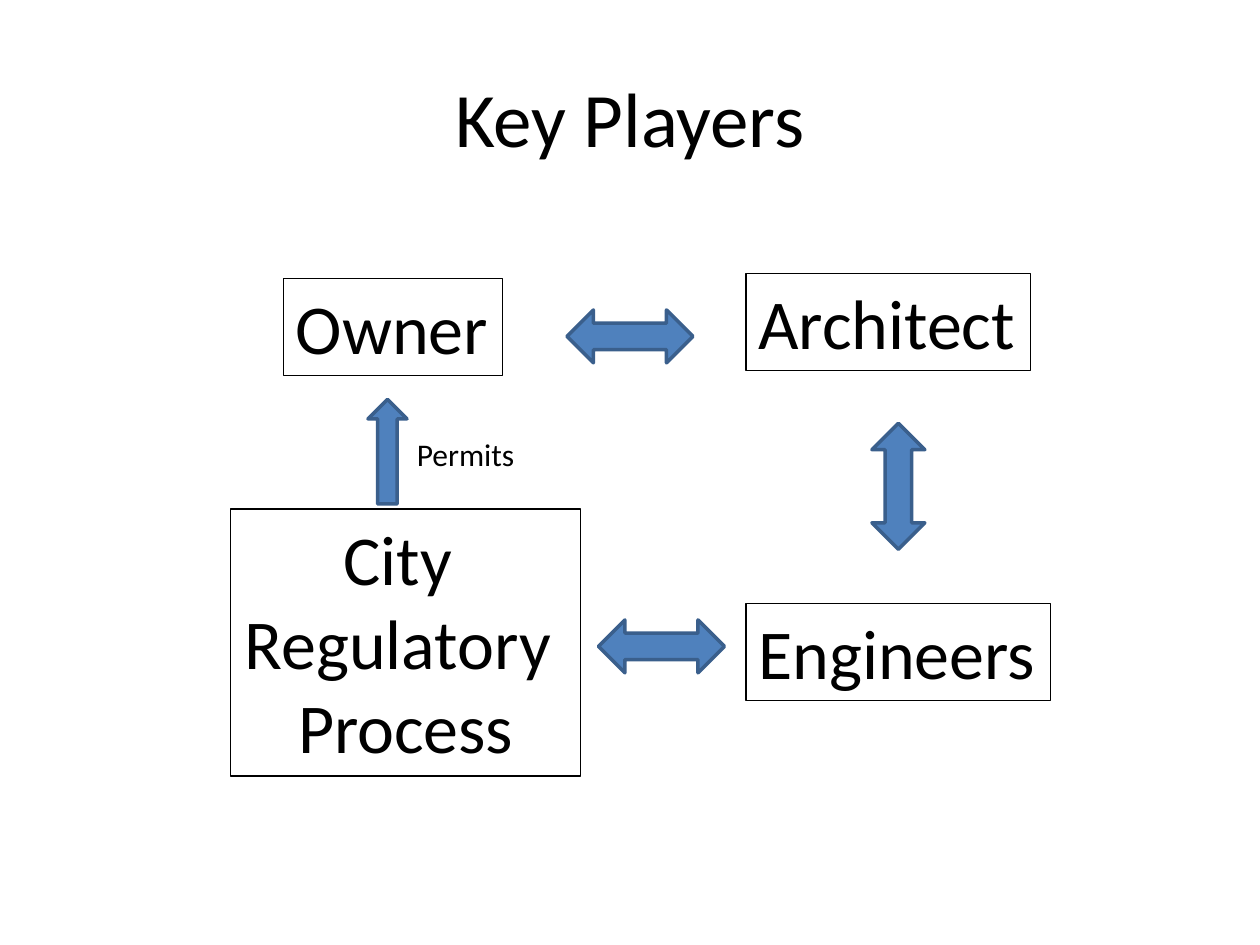
"""Build the Key Players slide, showing how project parties relate."""
from dataclasses import dataclass

import pptx
import pptx.dml.color
import pptx.enum.shapes
import pptx.enum.text
import pptx.util

Inches = pptx.util.Inches
Pt = pptx.util.Pt
Color = pptx.dml.color.RGBColor.from_string
Shape = pptx.enum.shapes.MSO_SHAPE
Align = pptx.enum.text.PP_ALIGN
Anchor = pptx.enum.text.MSO_ANCHOR
AutoSize = pptx.enum.text.MSO_AUTO_SIZE


@dataclass(frozen=True)
class Theme:
    """Colours, font, type sizes and line widths."""

    font: str = "Calibri"
    ink: str = "000000"
    arrow_fill: str = "4F81BD"
    arrow_line: str = "3A5F8C"
    title_size: int = 44
    player_size: int = 40
    label_size: int = 18
    frame_width: float = 0.75
    arrow_width: float = 2


def apply_format(target, values):
    """Set each named attribute on the target."""
    for name, value in values.items():
        setattr(target, name, value)


class SlideBuilder:
    """Draw styled elements on the current slide."""

    def __init__(self, page, theme):
        """Keep the slide and its style."""
        self.page = page
        self.theme = theme

    def text(self, place, lines, size, align=Align.LEFT, **frame_format):
        """Add a text box with one paragraph for each line."""
        box = self.page.shapes.add_textbox(*map(Inches, place))
        frame = box.text_frame
        fit = {"word_wrap": False, "auto_size": AutoSize.SHAPE_TO_FIT_TEXT}
        apply_format(frame, fit | frame_format)
        for index, line in enumerate(lines):
            para = frame.add_paragraph() if index else frame.paragraphs[0]
            para.alignment = align
            span = para.add_run()
            span.text = line
            apply_format(span.font, {"name": self.theme.font, "size": Pt(size)})
            span.font.color.rgb = Color(self.theme.ink)
        return box

    def title(self, place, wording):
        """Add the centred slide title."""
        self.text(place, [wording], self.theme.title_size, Align.CENTER, word_wrap=True,
                  auto_size=AutoSize.NONE, vertical_anchor=Anchor.MIDDLE)

    def player(self, place, lines, align=Align.LEFT):
        """Add a framed box naming one player."""
        box = self.text(place, lines, self.theme.player_size, align)
        self.outline(box, self.theme.ink, self.theme.frame_width)

    def label(self, place, wording):
        """Add a small plain label."""
        self.text(place, [wording], self.theme.label_size)

    def arrow(self, kind, place, rotation=0):
        """Add a filled block arrow."""
        arrow = self.page.shapes.add_shape(kind, *map(Inches, place))
        arrow.rotation = rotation
        arrow.shadow.inherit = False
        arrow.fill.solid()
        arrow.fill.fore_color.rgb = Color(self.theme.arrow_fill)
        self.outline(arrow, self.theme.arrow_line, self.theme.arrow_width)

    def outline(self, shape, color, width):
        """Set the line of a shape."""
        shape.line.color.rgb = Color(color)
        shape.line.width = Pt(width)


def main():
    """Build and save the deck."""
    deck = pptx.Presentation()
    apply_format(deck, {"slide_width": Inches(10), "slide_height": Inches(7.5)})
    builder = SlideBuilder(deck.slides.add_slide(deck.slide_layouts[6]), Theme())

    builder.title((0.5, 0.3, 9, 1.25), "Key Players")
    builder.player((2.25, 2.21, 1.74, 0.77), ["Owner"])
    builder.player((5.92, 2.17, 2.26, 0.77), ["Architect"])
    builder.player((5.92, 4.79, 2.42, 0.77), ["Engineers"])
    builder.player((1.83, 4.04, 2.78, 2.12), ["City ", "Regulatory ", "Process"], Align.CENTER)

    for left, top, rotation in [(4.75, 4.92, 0), (4.5, 2.46, 0), (6.63, 3.65, 90)]:
        builder.arrow(Shape.LEFT_RIGHT_ARROW, (left, top, 1, 0.42), rotation)
    builder.arrow(Shape.UP_ARROW, (2.92, 3.17, 0.31, 0.83))
    builder.label((3.21, 3.4, 0.98, 0.4), "Permits")

    deck.save("out.pptx")


if __name__ == "__main__":
    main()
